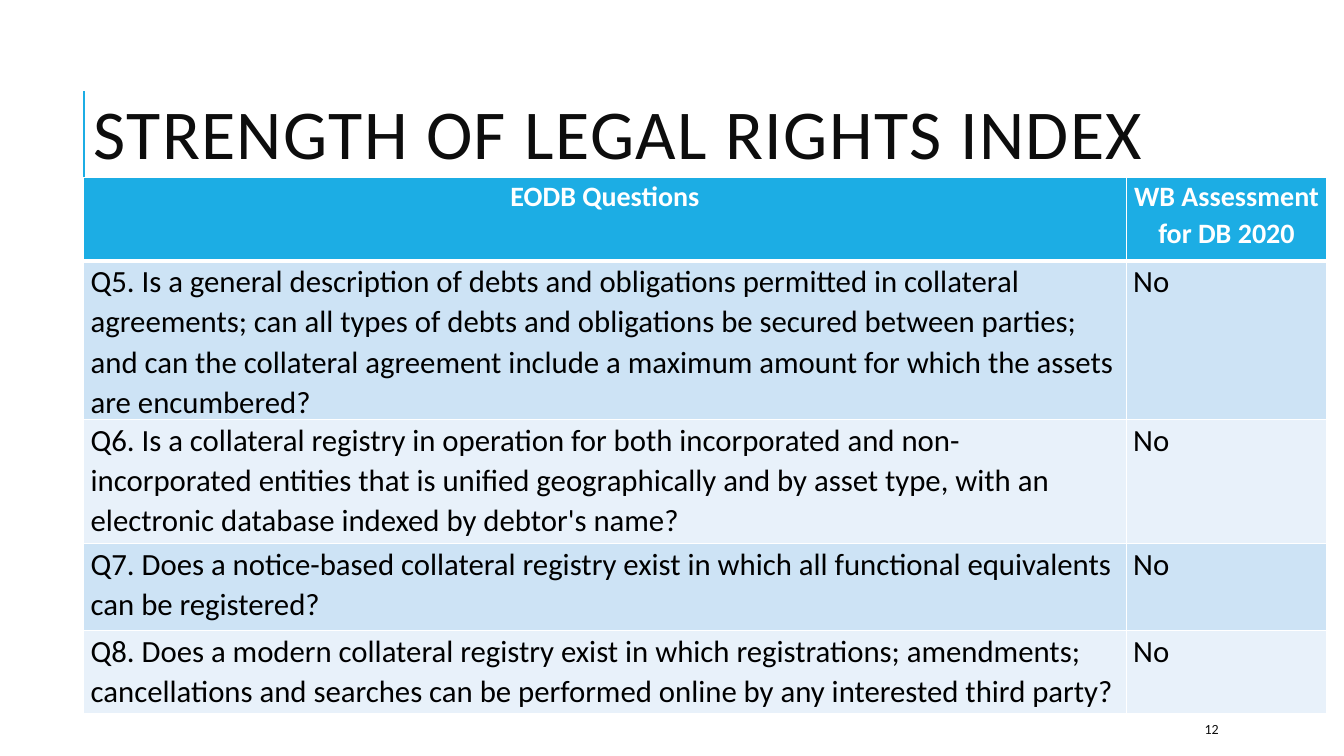
from dataclasses import dataclass

from lxml.etree import SubElement
from pptx import Presentation
from pptx.dml.color import RGBColor
from pptx.enum.shapes import MSO_CONNECTOR
from pptx.enum.text import MSO_ANCHOR, PP_ALIGN
from pptx.oxml.ns import qn
from pptx.util import Inches, Pt

# Content
TITLE = "STRENGTH OF LEGAL RIGHTS INDEX"
PAGE_NUMBER = "12"
HEADER = ("EODB Questions", "WB Assessment for DB 2020")
ANSWERS = [
    ("Q5. Is a general description of debts and obligations permitted in collateral "
     "agreements; can all types of debts and obligations be secured between parties; "
     "and can the collateral agreement include a maximum amount for which the assets "
     "are encumbered?", "No"),
    ("Q6. Is a collateral registry in operation for both incorporated and "
     "non-incorporated entities that is unified geographically and by asset type, with "
     "an electronic database indexed by debtor's name?", "No"),
    ("Q7. Does a notice-based collateral registry exist in which all functional "
     "equivalents can be registered?", "No"),
    ("Q8. Does a modern collateral registry exist in which registrations; amendments; "
     "cancellations and searches can be performed online by any interested third "
     "party?", "No"),
]


@dataclass(frozen=True)
class Theme:
    font: str = "Calibri"
    accent: str = "1CADE4"
    ink: str = "0D0D0D"
    body: str = "000000"
    white: str = "FFFFFF"
    bands: tuple = ("CDE3F5", "E8F1FA")
    title_size: int = 50
    header_size: int = 20
    body_size: int = 22
    number_size: int = 10


THEME = Theme()

# Layout in inches
WIDTH, HEIGHT = 13.33, 7.5
LEFT = 0.83
TABLE_TOP = 1.76
COLUMNS = (10.34, 1.99)
ROWS = (0.83, 1.23, 1.23, 0.87, 0.82)
CELL_INSET = 0.07


def style_paragraph(paragraph, size, color, bold=False, spacing=1.0):
    paragraph.line_spacing = spacing
    for run in paragraph.runs:
        font = run.font
        font.name, font.size, font.bold = THEME.font, Pt(size), bold
        font.color.rgb = RGBColor.from_string(color)


def add_text(slide, text, box, size, spacing=1.0):
    frame = slide.shapes.add_textbox(*map(Inches, box)).text_frame
    frame.word_wrap = True
    frame.vertical_anchor = MSO_ANCHOR.MIDDLE
    frame.text = text
    style_paragraph(frame.paragraphs[0], size, THEME.ink, spacing=spacing)
    return frame.paragraphs[0]


def set_borders(cell, bottom):
    """Draw white rules; they must come before the fill in the cell XML."""
    properties = cell._tc.get_or_add_tcPr()
    for side, width in (("L", 1), ("R", 1), ("T", 1), ("B", bottom)):
        line = SubElement(properties, qn(f"a:ln{side}"), w=str(Pt(width)))
        fill = SubElement(line, qn("a:solidFill"))
        SubElement(fill, qn("a:srgbClr"), val=THEME.white)


def fill_cell(cell, text, is_header, band):
    set_borders(cell, 3 if is_header else 1)
    cell.fill.solid()
    cell.fill.fore_color.rgb = RGBColor.from_string(band)
    cell.margin_left = cell.margin_right = Inches(CELL_INSET)
    cell.margin_top = cell.margin_bottom = 0
    cell.text_frame.text = text
    paragraph = cell.text_frame.paragraphs[0]
    paragraph.alignment = PP_ALIGN.CENTER if is_header else PP_ALIGN.LEFT
    size, color = ((THEME.header_size, THEME.white) if is_header
                   else (THEME.body_size, THEME.body))
    style_paragraph(paragraph, size, color, is_header, 1.07)


def add_questions(slide):
    box = (LEFT, TABLE_TOP, sum(COLUMNS), sum(ROWS))
    table = slide.shapes.add_table(len(ROWS), len(COLUMNS), *map(Inches, box)).table
    for column, width in zip(table.columns, COLUMNS):
        column.width = Inches(width)
    for row, height in zip(table.rows, ROWS):
        row.height = Inches(height)
    for r, texts in enumerate([HEADER, *ANSWERS]):
        band = THEME.bands[(r - 1) % 2] if r else THEME.accent
        for c, text in enumerate(texts):
            fill_cell(table.cell(r, c), text, r == 0, band)


def add_accent_line(slide):
    ends = map(Inches, (LEFT, 1.9, LEFT, 0.9))
    line = slide.shapes.add_connector(MSO_CONNECTOR.STRAIGHT, *ends)
    line.line.color.rgb = RGBColor.from_string(THEME.accent)
    line.line.width = Pt(1.5)
    SubElement(line._element.spPr, qn("a:effectLst"))


def main():
    presentation = Presentation()
    presentation.slide_width, presentation.slide_height = Inches(WIDTH), Inches(HEIGHT)
    slide = presentation.slides.add_slide(presentation.slide_layouts[6])

    # Heading with its accent line
    add_accent_line(slide)
    title = add_text(slide, TITLE, (LEFT, 0.87, 10.63, 1.02), THEME.title_size, 0.8)
    title.runs[0].font._element.set("spc", "100")

    # Page number and table
    add_text(slide, PAGE_NUMBER, (11.85, 7.08, 1.06, 0.3), THEME.number_size)
    add_questions(slide)
    presentation.save("out.pptx")


if __name__ == "__main__":
    main()
